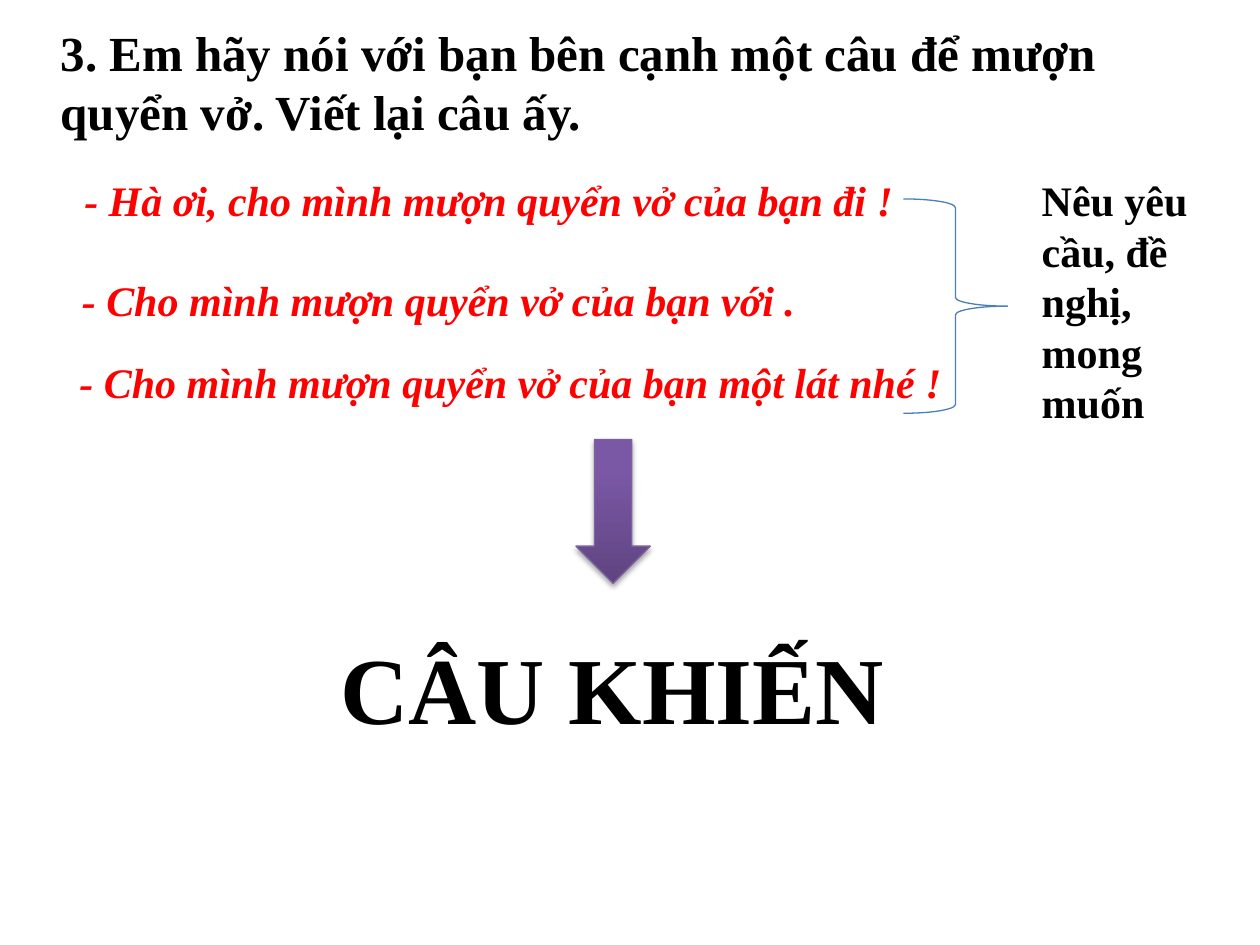
from lxml import etree
from pptx import Presentation
from pptx.dml.color import RGBColor
from pptx.enum.shapes import MSO_SHAPE as Shape
from pptx.enum.text import MSO_ANCHOR as Anchor, MSO_AUTO_SIZE as AutoSize, PP_ALIGN as Align
from pptx.oxml import parse_xml
from pptx.oxml.ns import nsdecls, qn
from pptx.util import Cm, Pt

FONT = "Times New Roman"
BLACK, RED = "000000", "FF0000"
BRACE_BLUE, ARROW_EDGE = "4B7EBC", "7D60A0"
ARROW_DARK, ARROW_LIGHT = "5F4480", "7B58A6"
REQUESTS = [
    (0, 0, "- Hà ơi, cho mình mượn quyển vở của bạn đi !"),
    (-0.05, 2.01, "- Cho mình mượn quyển vở của bạn với ."),
    (-0.1, 3.66, "- Cho mình mượn quyển vở của bạn một lát nhé !"),
]


def color(value):
    return RGBColor.from_string(value)


def place(item, left, top, width, height):
    item.left, item.top, item.width, item.height = map(Cm, (left, top, width, height))


def write(box, text, size, ink=BLACK, italic=False, align=Align.LEFT, wrap=True):
    frame = box.text_frame
    frame.word_wrap = wrap
    frame.auto_size = AutoSize.NONE
    frame.vertical_anchor = Anchor.TOP
    para = frame.paragraphs[0]
    para.alignment = align
    span = para.add_run()
    span.text = text
    font = span.font
    font.name, font.size, font.bold, font.italic = FONT, Pt(size), True, italic
    font.color.rgb = color(ink)
    return para


def add_text(page, area, text, size, **style):
    box = page.shapes.add_textbox(*map(Cm, area))
    return write(box, text, size, **style)


def add_heading(page, area):
    heading = page.shapes.title
    place(heading, *area)
    write(heading, "3. Em hãy nói với bạn bên cạnh một câu để mượn quyển vở. Viết lại câu ấy.", 28)


def add_requests(page, left, top, width):
    """The sample sentences, the brace that joins them, and what they express."""
    for shift, drop, sentence in REQUESTS:
        add_text(page, (left + shift, top + drop, width, 1.28), sentence, 24, ink=RED, italic=True)
    brace = page.shapes.add_shape(
        Shape.LEFT_BRACE, *map(Cm, (left + 16.76, top + 0.61, 2.1, 4.32)))
    brace.rotation = 180
    brace.shadow.inherit = False
    brace.fill.background()
    brace.line.color.rgb = color(BRACE_BLUE)
    brace.line.width = Pt(0.75)
    add_text(page, (left + 19.3, top, 4.27, 5.38), "Nêu yêu cầu, đề nghị, mong muốn", 24)


def add_shadow(shape):
    effects = shape._element.spPr.find(qn("a:effectLst"))
    effects.append(parse_xml(
        f'<a:outerShdw {nsdecls("a")} blurRad="{Pt(3.1)}" dist="{Pt(1.8)}" dir="5400000" rotWithShape="0">'
        '<a:srgbClr val="000000"><a:alpha val="35000"/></a:srgbClr></a:outerShdw>'))


def add_arrow(page, area):
    arrow = page.shapes.add_shape(Shape.DOWN_ARROW, *map(Cm, area))
    arrow.fill.gradient()
    arrow.fill.gradient_angle = 90
    for stop, position, shade in zip(arrow.fill.gradient_stops, (0, 0.8), (ARROW_DARK, ARROW_LIGHT)):
        stop.position = position
        stop.color.rgb = color(shade)
    arrow.line.color.rgb = color(ARROW_EDGE)
    arrow.line.width = Pt(0.75)
    arrow.shadow.inherit = False
    add_shadow(arrow)


def add_conclusion(page, area):
    para = add_text(page, area, "CÂU KHIẾN", 54, align=Align.CENTER, wrap=False)
    para.line_spacing = 1.5


def main():
    deck = Presentation()
    deck.slide_width, deck.slide_height = Cm(25.4), Cm(19.05)
    page = deck.slides.add_slide(deck.slide_layouts[5])
    add_heading(page, (0.97, 0.33, 23.5, 2.64))
    add_requests(page, 1.45, 3.4, 18.16)
    add_arrow(page, (11.61, 8.86, 1.5, 2.9))
    add_conclusion(page, (6.55, 11.43, 11.58, 3.3))
    deck.save("out.pptx")


if __name__ == "__main__":
    main()
